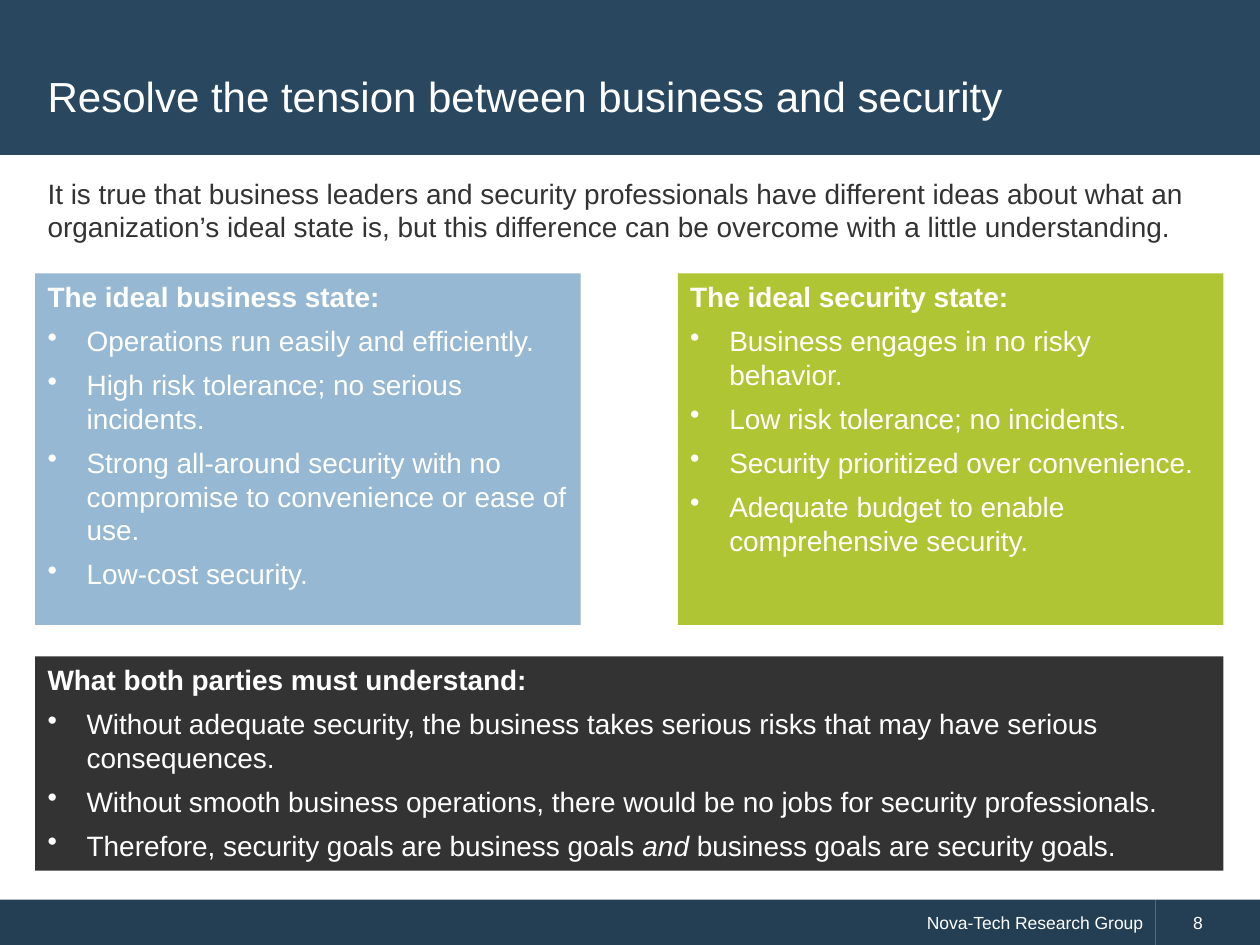
from dataclasses import dataclass

from lxml import etree
from pptx import Presentation
from pptx.dml.color import RGBColor
from pptx.enum.shapes import MSO_SHAPE
from pptx.enum.text import MSO_ANCHOR, PP_ALIGN
from pptx.oxml.ns import qn
from pptx.util import Inches, Pt

RECTANGLE = MSO_SHAPE.RECTANGLE
TOP, MIDDLE = MSO_ANCHOR.TOP, MSO_ANCHOR.MIDDLE
LEFT, RIGHT = PP_ALIGN.LEFT, PP_ALIGN.RIGHT


@dataclass(frozen=True)
class Theme:
    """Colours, font and type sizes of the deck."""
    font: str = "Arial"
    header: str = "29475F"
    footer: str = "243F54"
    business: str = "96B8D2"
    security: str = "B0C534"
    dark: str = "333333"
    white: str = "FFFFFF"
    title_size: int = 24
    body_size: int = 16
    footer_size: int = 10


THEME = Theme()
SLIDE_WIDTH, SLIDE_HEIGHT = 10, 7.5
MARGIN, CONTENT_WIDTH = 0.28, 9.43
STATE_WIDTH, STATE_TOP, STATE_HEIGHT = 4.33, 2.17, 2.79
BULLET_INDENT = Inches(0.31)

INTRO = (
    "It is true that business leaders and security professionals have different "
    "ideas about what an organization’s ideal state is, but this difference can "
    "be overcome with a little understanding."
)
BUSINESS_POINTS = [
    "Operations run easily and efficiently.",
    "High risk tolerance; no serious incidents.",
    "Strong all-around security with no compromise to convenience or ease of use.",
    "Low-cost security.",
]
SECURITY_POINTS = [
    "Business engages in no risky behavior.",
    "Low risk tolerance; no incidents.",
    "Security prioritized over convenience.",
    "Adequate budget to enable comprehensive security.",
]
SHARED_POINTS = [
    "Without adequate security, the business takes serious risks that may have "
    "serious consequences.",
    "Without smooth business operations, there would be no jobs for security "
    "professionals.",
    "Therefore, security goals are business goals *and* business goals are "
    "security goals.",
]


def add_panel(page, box, color):
    """Add a plain filled rectangle."""
    panel = page.shapes.add_shape(RECTANGLE, *map(Inches, box))
    panel.shadow.inherit = False
    panel.fill.solid()
    panel.fill.fore_color.rgb = RGBColor.from_string(color)
    panel.line.fill.background()
    return panel


def prepare_frame(shape, anchor):
    """Return the wrapped text frame of a shape."""
    frame = shape.text_frame
    frame.word_wrap = True
    frame.vertical_anchor = anchor
    return frame


def write_para(para, text, size, color=THEME.white, bold=False, align=LEFT):
    """Fill a paragraph, setting words between asterisks in italics."""
    para.alignment = align
    para.font.name = THEME.font
    para.font.size = Pt(size)
    para.font.bold = bold
    para.font.color.rgb = RGBColor.from_string(color)
    for index, part in enumerate(text.split("*")):
        span = para.add_run()
        span.text = part
        if index % 2:
            span.font.italic = True


def add_bullet(para):
    """Give a paragraph a hanging bullet."""
    properties = para._p.get_or_add_pPr()
    properties.set("marL", str(BULLET_INDENT))
    properties.set("indent", str(-BULLET_INDENT))
    bullet = etree.Element(qn("a:buChar"), char="•")
    properties.insert_element_before(
        bullet, "a:tabLst", "a:defRPr", "a:extLst"
    )


def add_text(page, box, text, size, color, anchor):
    """Add a one-paragraph text box."""
    frame = prepare_frame(page.shapes.add_textbox(*map(Inches, box)), anchor)
    write_para(frame.paragraphs[0], text, size, color)


def add_header(page, box, title):
    """Add the title band."""
    left, top, width, height = box
    add_panel(page, box, THEME.header)
    title_box = (left + MARGIN, top + 0.28, CONTENT_WIDTH, height - 0.27)
    add_text(page, title_box, title, THEME.title_size, THEME.white, MIDDLE)


def add_points(page, box, color, heading, points):
    """Add a coloured panel with a heading and bulleted points."""
    frame = prepare_frame(add_panel(page, box, color), TOP)
    write_para(frame.paragraphs[0], heading, THEME.body_size, bold=True)
    for point in points:
        para = frame.add_paragraph()
        write_para(para, point, THEME.body_size)
        add_bullet(para)
    for para in frame.paragraphs:
        para.space_after = Pt(6)


def add_footer(page, box, owner, number):
    """Add the footer band with the owner and the page number."""
    left, top, width, height = box
    number_width = 0.83
    owner_width = width - number_width
    parts = [
        (left, owner_width, owner, RIGHT),
        (left + owner_width, number_width, number, LEFT),
    ]
    for part_left, part_width, text, align in parts:
        panel = add_panel(page, (part_left, top, part_width, height), THEME.footer)
        frame = prepare_frame(panel, MIDDLE)
        frame.margin_left = Inches(0.3)
        write_para(frame.paragraphs[0], text, THEME.footer_size, align=align)


def main():
    """Build and save the deck."""
    deck = Presentation()
    deck.slide_width = Inches(SLIDE_WIDTH)
    deck.slide_height = Inches(SLIDE_HEIGHT)
    page = deck.slides.add_slide(deck.slide_layouts[6])

    add_header(page, (0, 0, SLIDE_WIDTH, 1.23),
               "Resolve the tension between business and security")
    add_text(page, (MARGIN, 1.35, CONTENT_WIDTH, 0.64), INTRO,
             THEME.body_size, THEME.dark, TOP)
    states = [
        (MARGIN, THEME.business, "The ideal business state:", BUSINESS_POINTS),
        (MARGIN + CONTENT_WIDTH - STATE_WIDTH, THEME.security,
         "The ideal security state:", SECURITY_POINTS),
    ]
    for left, color, heading, points in states:
        add_points(page, (left, STATE_TOP, STATE_WIDTH, STATE_HEIGHT),
                   color, heading, points)
    add_points(page, (MARGIN, 5.21, CONTENT_WIDTH, 1.7), THEME.dark,
               "What both parties must understand:", SHARED_POINTS)
    add_footer(page, (0, 7.14, SLIDE_WIDTH, 0.37), "Nova-Tech Research Group", "8")

    deck.save("out.pptx")


if __name__ == "__main__":
    main()
